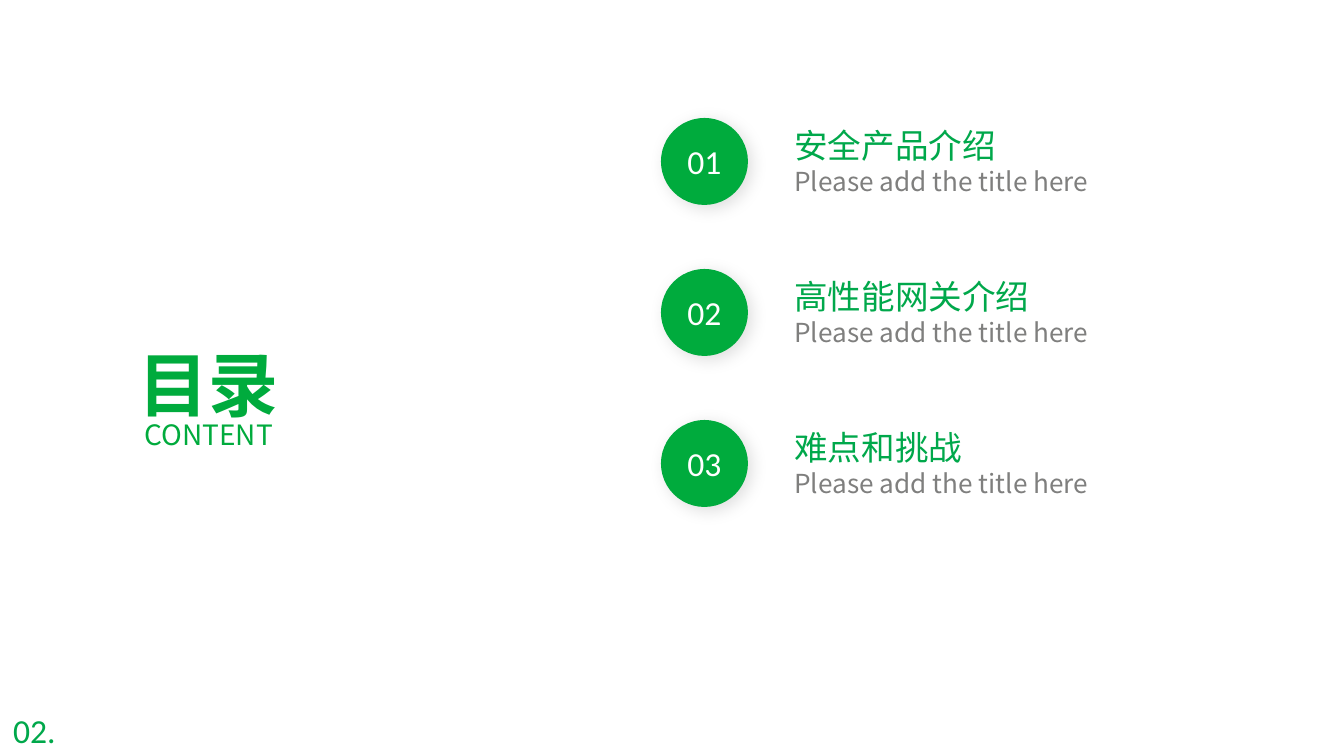
import pptx
import pptx.util
import pptx.dml.color
import pptx.enum.shapes
import pptx.enum.text
import pptx.oxml
import pptx.oxml.ns

HEADING = "目录"
SUBHEADING = "CONTENT"
PAGE_NUMBER = "02."
CAPTION = "Please add the title here"
SECTIONS = ["安全产品介绍", "高性能网关介绍", "难点和挑战"]

COLORS = {"green": "00AB3D", "text": "00A84B", "gray": "7F7F7E", "white": "FFFFFF"}
CJK = "Noto Sans CJK SC"
LATIN = "Calibri"
ALIGN = pptx.enum.text.PP_ALIGN
ANCHOR = pptx.enum.text.MSO_ANCHOR
SCALE = 914400 / 134.4

FIRST_TOP, PITCH = 118, 151
CIRCLE_LEFT, CIRCLE_SIZE = 661, 87
TEXT_LEFT, TEXT_WIDTH = 781, 344
CAPTION_OFFSET = 41

SHADOW = (
    f'<a:effectLst {pptx.oxml.ns.nsdecls("a")}>'
    '<a:outerShdw blurRad="114300" dist="38100" dir="2700000" algn="tl" rotWithShape="0">'
    '<a:srgbClr val="000000"><a:alpha val="12000"/></a:srgbClr>'
    "</a:outerShdw></a:effectLst>"
)


def px(length):
    return pptx.util.Emu(round(length * SCALE))


def rgb(name):
    return pptx.dml.color.RGBColor.from_string(COLORS[name])


def write(box, text, size, color, font=CJK, bold=False, align=ALIGN.LEFT,
          anchor=ANCHOR.TOP, spacing=None, wrap=True):
    frame = box.text_frame
    frame.auto_size = pptx.enum.text.MSO_AUTO_SIZE.NONE
    frame.word_wrap = wrap
    frame.vertical_anchor = anchor
    para = frame.paragraphs[0]
    para.alignment = align
    para.line_spacing = spacing
    span = para.add_run()
    span.text = text
    span.font.size = pptx.util.Pt(size)
    span.font.bold = bold
    span.font.color.rgb = rgb(color)
    span.font.name = font
    properties = span.font._element
    east_asian = properties.makeelement(pptx.oxml.ns.qn("a:ea"), {"typeface": font})
    properties.append(east_asian)


def add_text(page, left, top, width, height, text, **style):
    box = page.shapes.add_textbox(px(left), px(top), px(width), px(height))
    write(box, text, **style)


def add_circle(page, top, text):
    circle = page.shapes.add_shape(
        pptx.enum.shapes.MSO_SHAPE.OVAL,
        px(CIRCLE_LEFT), px(top), px(CIRCLE_SIZE), px(CIRCLE_SIZE))
    circle.fill.solid()
    circle.fill.fore_color.rgb = rgb("green")
    circle.line.fill.background()
    circle._element.spPr.append(pptx.oxml.parse_xml(SHADOW))
    write(circle, text, size=18, color="white", font=LATIN,
          align=ALIGN.CENTER, anchor=ANCHOR.MIDDLE, wrap=False)


def main():
    deck = pptx.Presentation()
    deck.slide_width, deck.slide_height = px(1344), px(756)
    page = deck.slides.add_slide(deck.slide_layouts[5])

    title = page.shapes.title
    title.left, title.top, title.width, title.height = px(62), px(293), px(294), px(126)
    write(title, HEADING, size=37.5, color="green", bold=True,
          align=ALIGN.CENTER, spacing=1.5)
    add_text(page, 62, 394, 294, 59, SUBHEADING, size=15, color="green",
             align=ALIGN.CENTER, spacing=1.5)

    for index, section in enumerate(SECTIONS):
        top = FIRST_TOP + index * PITCH
        add_text(page, TEXT_LEFT, top, TEXT_WIDTH, 54, section, size=18, color="text")
        add_text(page, TEXT_LEFT, top + CAPTION_OFFSET, TEXT_WIDTH, 46, CAPTION,
                 size=14, color="gray")
        add_circle(page, top, f"{index + 1:02d}")

    add_text(page, 0, 703, 93, 54, PAGE_NUMBER, size=18, color="text", font=LATIN)
    deck.save("out.pptx")


if __name__ == "__main__":
    main()
